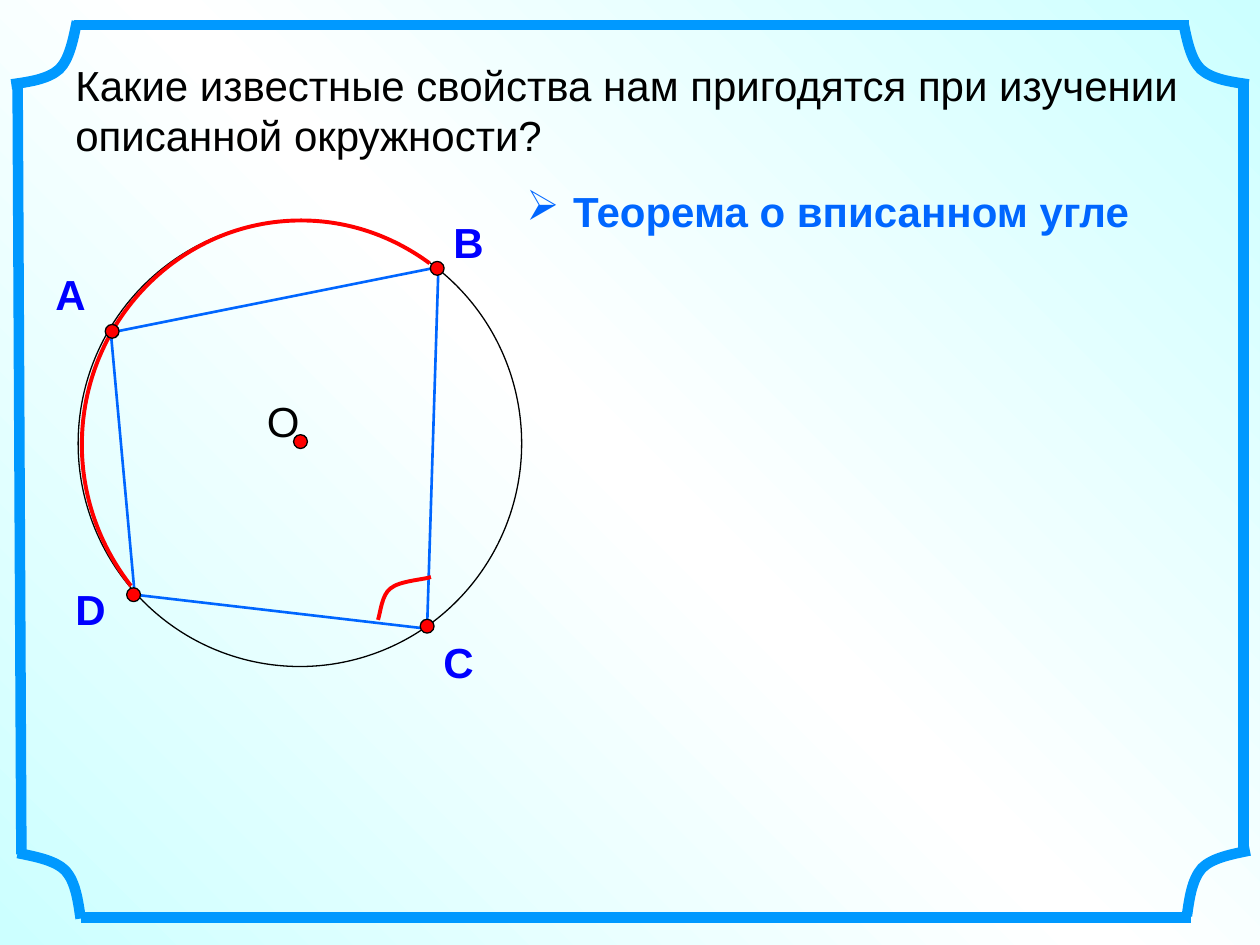
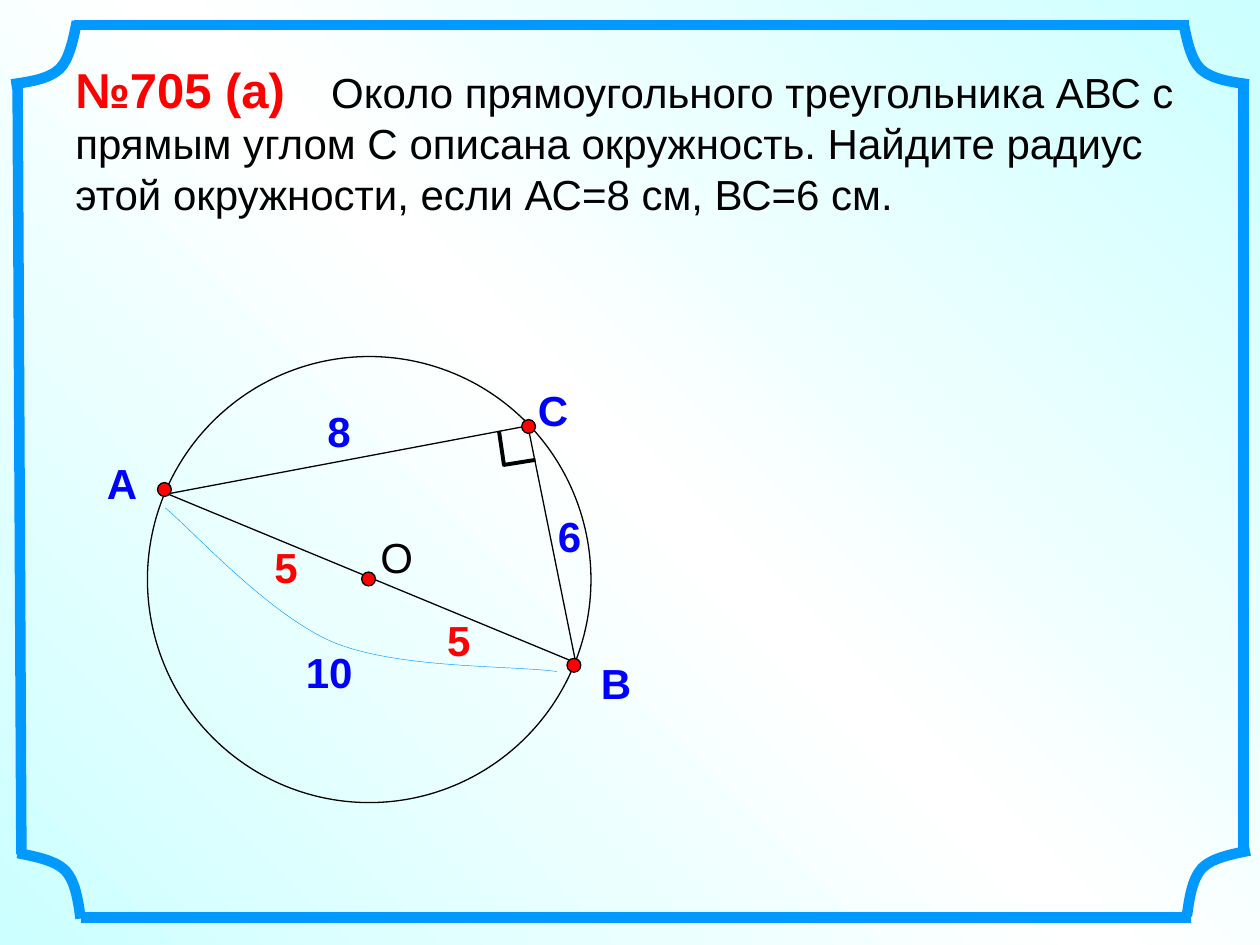
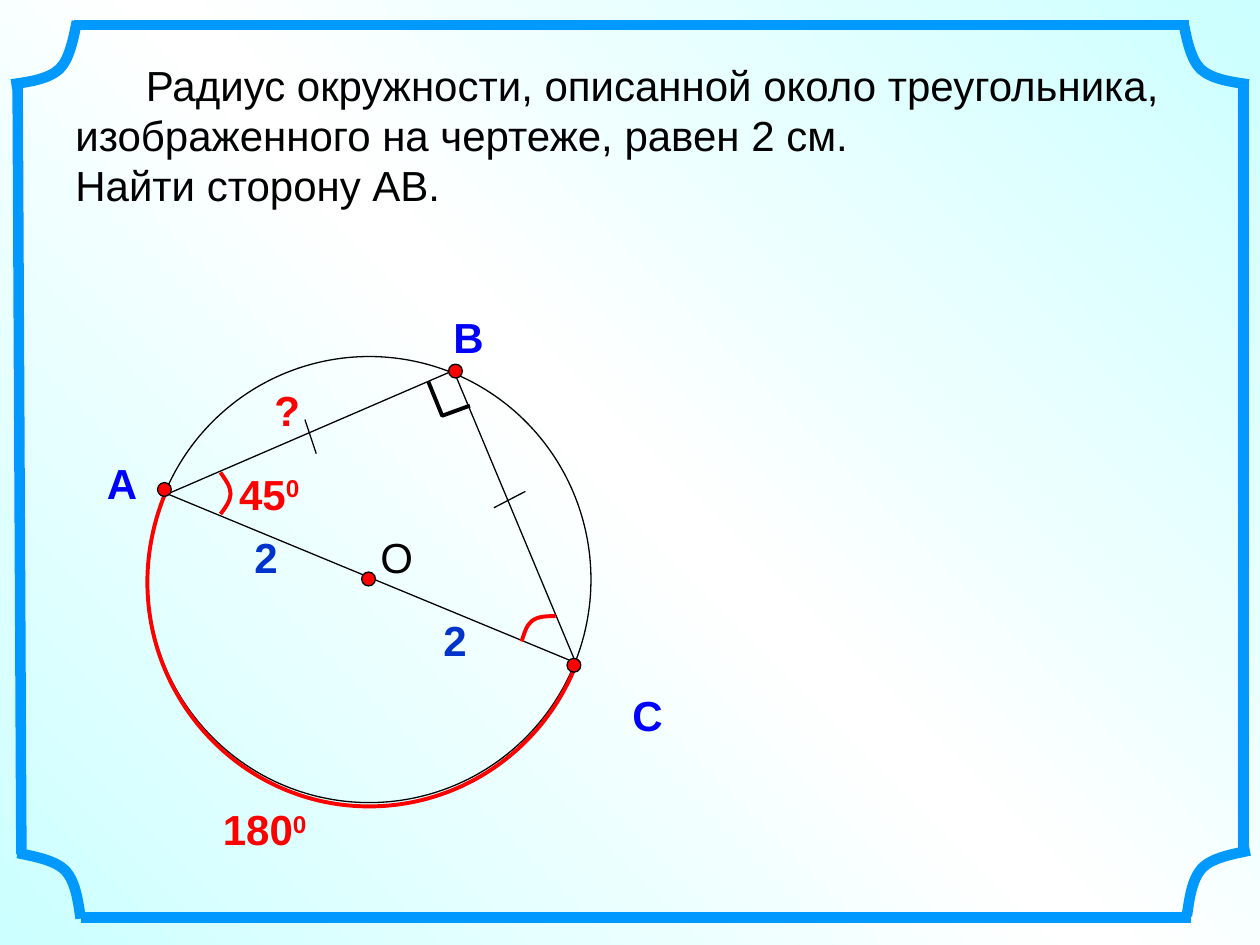
import copy

import lxml.etree
import pptx
import pptx.dml.color
import pptx.enum.shapes
import pptx.enum.text
import pptx.oxml.ns
import pptx.util

Inches = pptx.util.Inches
Pt = pptx.util.Pt
qn = pptx.oxml.ns.qn

COLORS = {
    "ink": "000000", "red": "FF0000", "name": "0000FF", "theme": "0066FF",
    "frame": "0099FF", "side": "0033CC", "sky": "CCFFFF", "white": "FFFFFF",
}
FONT = "Arial"
SIZE = 24
DOT = 0.11
RING = (3.52, 3.54)
BEND = [(0, 0), (0.15, 0.03), (0.3, 0.06), (0.38, 0.14),
        (0.46, 0.23), (0.48, 0.38), (0.5, 0.52)]


def color(name):
    return pptx.dml.color.RGBColor.from_string(COLORS[name])


class Board:
    def __init__(self):
        self.deck = pptx.Presentation()
        self.deck.slide_width = Inches(10)
        self.deck.slide_height = Inches(7.5)
        self.slide = None
        self.paint()

    def paint(self):
        """Give the master its three-stop diagonal gradient."""
        fill = self.deck.slide_masters[0].background.fill
        fill.gradient()
        fill.gradient_angle = 45
        first = fill.gradient_stops[0]._gs
        first.addnext(copy.deepcopy(first))
        tones = ("sky", "white", "sky")
        for stop, place, tone in zip(fill.gradient_stops, (0, 0.5, 1), tones):
            stop.position = place
            stop.color.rgb = color(tone)

    def start(self):
        self.slide = self.deck.slides.add_slide(self.deck.slide_layouts[6])
        self.frame()

    def frame(self):
        sides = [((0.59, 0.2), (9.44, 0.2)), ((0.64, 7.28), (9.45, 7.28)),
                 ((9.87, 0.66), (9.87, 6.78)), ((0.14, 0.66), (0.17, 6.78))]
        for a, b in sides:
            self.line(a, b, "frame", 6)
        corners = [
            [(0.14 + x, 6.77 + y) for x, y in BEND],
            [(9.92 - x, 6.75 + y) for x, y in BEND],
            [(9.39 + y, 0.17 + x) for x, y in BEND],
            [(0.61 - y, 0.17 + x) for x, y in BEND],
        ]
        for points in corners:
            self.curve(points, "frame", 6)

    def line(self, a, b, tone="ink", width=0.75):
        kind = pptx.enum.shapes.MSO_CONNECTOR.STRAIGHT
        link = self.slide.shapes.add_connector(
            kind, *[Inches(v) for v in (*a, *b)])
        lxml.etree.SubElement(link._element.spPr, qn("a:effectLst"))
        link.line.color.rgb = color(tone)
        link.line.width = Pt(width)

    def style(self, shape, tone, width, fill=None):
        shape.shadow.inherit = False
        if fill:
            shape.fill.solid()
            shape.fill.fore_color.rgb = color(fill)
        else:
            shape.fill.background()
        shape.line.color.rgb = color(tone)
        shape.line.width = Pt(width)

    def trace(self, points, tone="ink", width=0.75, close=False):
        """Draw straight segments through the points."""
        spots = [(Inches(x), Inches(y)) for x, y in points]
        pen = self.slide.shapes.build_freeform(*spots[0])
        pen.add_line_segments(spots[1:], close=close)
        shape = pen.convert_to_shape()
        self.style(shape, tone, width)
        return shape

    def curve(self, points, tone="red", width=2.25):
        """Draw Bézier curves: a start, then three points for each curve."""
        shape = self.trace(points, tone, width)
        track = shape._element.find(".//" + qn("a:path"))
        steps = track.findall(qn("a:lnTo"))
        for i in range(0, len(steps), 3):
            arc = lxml.etree.SubElement(track, qn("a:cubicBezTo"))
            for step in steps[i:i + 3]:
                arc.append(step[0])
                track.remove(step)

    def oval(self, x, y, w, h, fill=None):
        kind = pptx.enum.shapes.MSO_SHAPE.OVAL
        shape = self.slide.shapes.add_shape(
            kind, *[Inches(v) for v in (x, y, w, h)])
        self.style(shape, "ink", 0.75, fill)

    def dot(self, x, y):
        """Mark a point, given by its centre."""
        self.oval(x - DOT / 2, y - DOT / 2, DOT, DOT, "red")

    def ring(self, x, y, mid, name):
        """Draw the circle, its centre and the centre's letter."""
        self.label("О", *name, "ink", 0.46, wrap=False, bold=False)
        self.oval(x, y, *RING)
        self.dot(*mid)

    def box(self, x, y, w, h, wrap=True):
        frame = self.slide.shapes.add_textbox(
            *[Inches(v) for v in (x, y, w, h)]).text_frame
        frame.word_wrap = wrap
        frame.auto_size = pptx.enum.text.MSO_AUTO_SIZE.SHAPE_TO_FIT_TEXT
        return frame

    def font(self, run, tone, bold=False, size=SIZE):
        run.font.name = FONT
        run.font.size = Pt(size)
        run.font.bold = bold
        run.font.color.rgb = color(tone)

    def label(self, text, x, y, tone="name", w=0.55, wrap=True, bold=True,
              power=None):
        para = self.box(x, y, w, 0.5, wrap).paragraphs[0]
        para.text = text
        if power:
            run = para.add_run()
            run.text = power
            run.font._element.set("baseline", "30000")
        for run in para.runs:
            self.font(run, tone, bold)

    def task(self, text, h):
        """Write the wording at the top of the slide."""
        frame = self.box(0.5, 0.42, 9.17, h)
        frame.text = text
        for para in frame.paragraphs:
            for run in para.runs:
                self.font(run, "ink")
        return frame.paragraphs[0]

    def indent(self, para, first, left=0):
        props = para._p.get_or_add_pPr()
        props.set("marL", str(Inches(left)))
        props.set("indent", str(Inches(first)))
        return props

    def bullet(self, text, x, y, w):
        para = self.box(x, y, w, 0.5).paragraphs[0]
        para.text = text
        props = self.indent(para, -0.37, 0.37)
        lxml.etree.SubElement(props, qn("a:buChar")).set("char", "➢")
        self.font(para.runs[0], "theme", True)


def theorem(board):
    board.start()
    board.ring(0.62, 1.75, (2.385, 3.505), (2.02, 3.09))
    board.trace([(1.07, 4.72), (0.88, 2.64), (3.48, 2.12), (3.39, 4.99)],
                "theme", 1.5, close=True)
    board.curve([(1.04, 4.65), (0.79, 4.33), (0.65, 3.94), (0.65, 3.53),
                 (0.65, 2.55), (1.43, 1.75), (2.39, 1.75),
                 (2.76, 1.75), (3.11, 1.87), (3.41, 2.09)])
    for text, name, spot in [("А", (0.34, 2.08), (0.89, 2.63)),
                             ("В", (3.5, 1.67), (3.47, 2.13)),
                             ("D", (0.5, 4.58), (1.06, 4.72)),
                             ("С", (3.42, 5), (3.39, 4.97))]:
        board.label(text, *name)
        board.dot(*spot)
    board.curve([(3.42, 4.58), (3.37, 4.6), (3.17, 4.61), (3.1, 4.67),
                 (3.03, 4.72), (3.02, 4.86), (3, 4.92)])
    board.task("Какие известные свойства нам пригодятся при изучении "
               "описанной окружности?", 0.9)
    board.bullet("Теорема о вписанном угле", 4.08, 1.42, 5.5)


def triangle(board, top, names):
    """Draw a triangle on a diameter; top is the right-angled corner."""
    board.start()
    board.trace([(1.33, 3.92), (4.57, 5.26), top], close=True)
    board.ring(1.17, 2.83, (2.925, 4.595), (2.92, 4.17))
    for text, x, y in names:
        board.label(text, x, y)


def corners(board, top):
    for spot in [(1.305, 3.885), (4.555, 5.28), top]:
        board.dot(*spot)


def radius(board):
    triangle(board, (4.19, 3.38),
             [("С", 4.17, 3), ("В", 4.67, 5.17), ("А", 0.75, 3.58),
              ("8", 2.5, 3.17), ("6", 4.33, 4)])
    corners(board, (4.195, 3.385))
    para = board.task("№705 (а)", 1.37)
    board.font(para.runs[0], "red", True, 28)
    tabs = lxml.etree.SubElement(para._p.get_or_add_pPr(), qn("a:tabLst"))
    tab = lxml.etree.SubElement(tabs, qn("a:tab"))
    tab.set("pos", str(Inches(2.03)))
    tab.set("algn", "l")
    run = para.add_run()
    run.text = ("\tОколо прямоугольного треугольника АВС с прямым углом С "
                "описана окружность. Найдите радиус этой окружности, "
                "если АС=8 см, ВС=6 см.")
    board.font(run, "ink")
    board.trace([(4.25, 3.65), (4, 3.69), (3.96, 3.42)], width=2.25)
    board.curve([(1.31, 4.03), (1.53, 4.21), (2.13, 4.88), (2.65, 5.1),
                 (3.17, 5.31), (4.05, 5.28), (4.42, 5.33)], "frame", 0.25)
    board.label("10", 2.33, 5.08, w=0.83)
    for x, y in [(2.08, 4.25), (3.45, 4.83)]:
        board.label("5", x, y, "red")


def side(board):
    triangle(board, (3.6, 2.94),
             [("В", 3.5, 2.42), ("С", 4.92, 5.42), ("А", 0.75, 3.58)])
    board.curve([(4.57, 5.28), (4.3, 5.96), (3.65, 6.4), (2.93, 6.4),
                 (1.96, 6.4), (1.17, 5.6), (1.17, 4.62),
                 (1.17, 4.38), (1.22, 4.14), (1.31, 3.92)])
    corners(board, (3.615, 2.945))
    para = board.task("Радиус окружности, описанной около треугольника, "
                      "изображенного на чертеже, равен 2 см.\n"
                      "Найти сторону АВ.", 1.3)
    board.indent(para, 0.56)
    board.trace([(3.73, 3.22), (3.51, 3.3), (3.4, 3.03)], width=2.25)
    board.line((2.42, 3.33), (2.51, 3.6))
    board.line((4.17, 3.9), (3.92, 4.03))
    board.curve([(1.75, 3.75), (1.79, 3.81), (1.83, 3.86), (1.83, 3.92),
                 (1.83, 3.97), (1.79, 4.03), (1.75, 4.08)])
    board.curve([(4.14, 5.09), (4.16, 5.03), (4.18, 4.96), (4.22, 4.93),
                 (4.27, 4.89), (4.34, 4.89), (4.41, 4.89)])
    for text, x, y, tone, w, power in [
            ("180", 1.67, 6.33, "red", 0.88, "0"),
            ("45", 1.8, 3.67, "red", 0.7, "0"),
            ("?", 2.08, 3, "red", 0.4, None),
            ("2", 3.42, 4.83, "side", 0.39, None),
            ("2", 1.92, 4.17, "side", 0.39, None)]:
        board.label(text, x, y, tone, w, wrap=False, power=power)


def main():
    board = Board()
    theorem(board)
    radius(board)
    side(board)
    board.deck.save("out.pptx")


if __name__ == "__main__":
    main()
